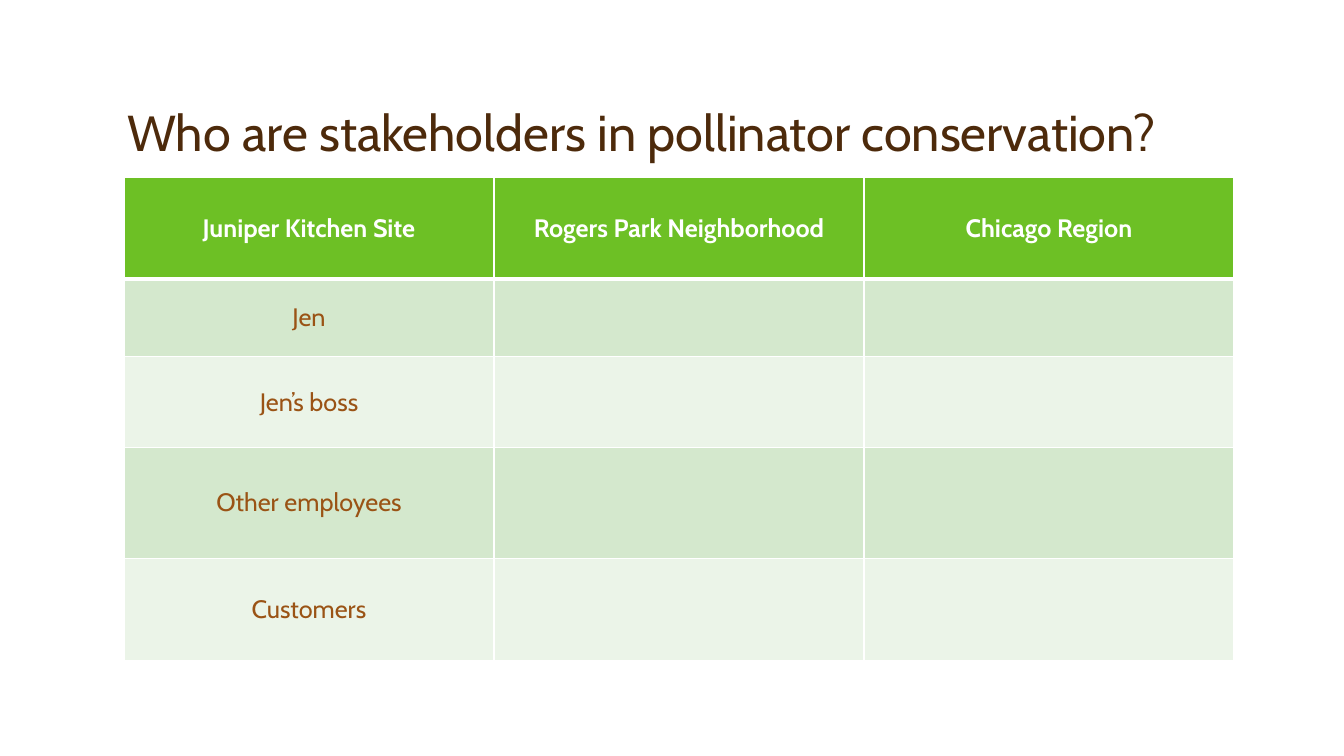
from dataclasses import dataclass

from lxml.etree import SubElement
from pptx import Presentation
from pptx.dml.color import RGBColor
from pptx.enum.text import MSO_ANCHOR, MSO_AUTO_SIZE, PP_ALIGN
from pptx.oxml.ns import qn
from pptx.util import Inches, Pt


@dataclass(frozen=True)
class Theme:
    font: str = "Cabin"
    title: str = "4D2A0B"
    body: str = "9A5315"
    white: str = "FFFFFF"
    header: str = "6DC025"
    bands: tuple = ("D4E8CD", "EBF4E8")
    title_size: int = 36
    cell_size: int = 18


theme = Theme()


def write(tf, text, size=theme.cell_size, color=theme.body, bold=False,
          align=PP_ALIGN.CENTER, spacing=None):
    p = tf.paragraphs[0]
    p.alignment = align
    p.line_spacing = spacing
    r = p.add_run()
    r.text = text
    r.font.name = theme.font
    r.font.size = Pt(size)
    r.font.bold = bold
    r.font.color.rgb = RGBColor.from_string(color)


def border(cell, side, width):
    ln = SubElement(cell._tc.get_or_add_tcPr(), qn(f"a:{side}"), w=str(Pt(width)))
    fill = SubElement(ln, qn("a:solidFill"))
    SubElement(fill, qn("a:srgbClr"), val=theme.white)


prs = Presentation()
prs.slide_width, prs.slide_height = Inches(13.33), Inches(7.5)
W, H = prs.slide_width, prs.slide_height
s = prs.slides.add_slide(prs.slide_layouts[5])

title = s.shapes.title
title.left, title.top = int(W * 0.087), int(H * 0.044)
title.width, title.height = int(W * 0.825), int(H * 0.177)
tf = title.text_frame
tf.word_wrap = True
tf.auto_size = MSO_AUTO_SIZE.NONE
tf.vertical_anchor = MSO_ANCHOR.BOTTOM
write(tf, "Who are stakeholders in pollinator conservation?",
      size=theme.title_size, color=theme.title, align=PP_ALIGN.LEFT, spacing=0.9)

rows = [
    ["Juniper Kitchen Site", "Rogers Park Neighborhood", "Chicago Region"],
    ["Jen", "", ""],
    ["Jen’s boss", "", ""],
    ["Other employees", "", ""],
    ["Customers", "", ""],
]
row_heights = [1.01, 0.77, 0.9, 1.1, 1.01]
col_width = Inches(3.67)

frame = s.shapes.add_table(len(rows), len(rows[0]), Inches(1.23), Inches(1.76),
                           col_width * len(rows[0]), Inches(sum(row_heights)))
table = frame.table
for col in table.columns:
    col.width = col_width

for i, (labels, height) in enumerate(zip(rows, row_heights)):
    table.rows[i].height = Inches(height)
    is_header = i == 0
    for j, label in enumerate(labels):
        cell = table.cell(i, j)
        cell.vertical_anchor = MSO_ANCHOR.MIDDLE
        for side in ("lnL", "lnR", "lnT", "lnB"):
            thick = (side == "lnB" and is_header) or (side == "lnT" and i == 1)
            border(cell, side, 3 if thick else 1)
        cell.fill.solid()
        cell.fill.fore_color.rgb = RGBColor.from_string(
            theme.header if is_header else theme.bands[(i - 1) % 2])
        if label:
            write(cell.text_frame, label, bold=is_header,
                  color=theme.white if is_header else theme.body)

prs.save("out.pptx")
